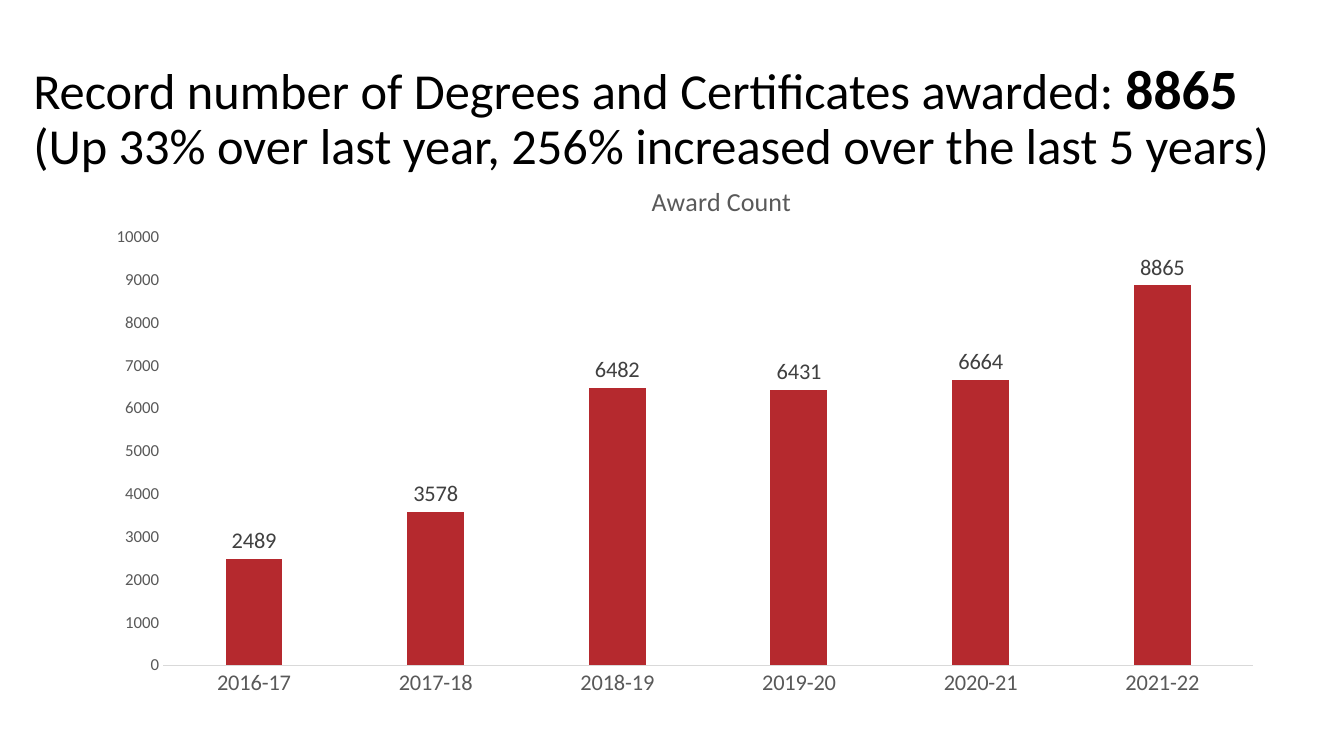
from dataclasses import dataclass

import lxml.etree
import pptx
import pptx.chart.data
import pptx.dml.color
import pptx.enum.chart
import pptx.enum.text
import pptx.oxml.ns
import pptx.util

Inches = pptx.util.Inches


@dataclass(frozen=True)
class Theme:
    font: str = "Calibri"
    black: str = "000000"
    grey: str = "595959"
    label_grey: str = "404040"
    rule: str = "D9D9D9"
    bar: str = "B5292E"
    title: float = 36
    highlight: float = 39.6
    chart_title: float = 18.6
    category: float = 16
    scale: float = 12


@dataclass(frozen=True)
class Award:
    year: str
    count: int


@dataclass(frozen=True)
class Phrase:
    text: str
    size: float
    bold: bool = False
    ends_line: bool = False


THEME = Theme()
AWARDS = [
    Award("2016-17", 2489),
    Award("2017-18", 3578),
    Award("2018-19", 6482),
    Award("2019-20", 6431),
    Award("2020-21", 6664),
    Award("2021-22", 8865),
]
HEADLINE = [
    Phrase("Record number of Degrees and Certificates awarded: ", THEME.title),
    Phrase("8865", THEME.highlight, bold=True, ends_line=True),
    Phrase("(Up 33% over last year, 256% increased over the last 5 years)", THEME.title),
]
PLOT_AREA = {"x": 0.056, "y": 0.135, "w": 0.867, "h": 0.774}


def rgb(color: str) -> pptx.dml.color.RGBColor:
    return pptx.dml.color.RGBColor.from_string(color)


def style_font(font, *, size: float, color: str, bold: bool = False) -> None:
    font.name = THEME.font
    font.size = pptx.util.Pt(size)
    font.bold = bold
    font.color.rgb = rgb(color)


def add_text(para, text: str, *, size: float, color: str, bold: bool = False) -> None:
    span = para.add_run()
    span.text = text
    style_font(span.font, size=size, color=color, bold=bold)


def fill_title(box) -> None:
    box.left, box.top = Inches(0.23), Inches(0.45)
    box.width, box.height = Inches(13.1), Inches(1.45)
    frame = box.text_frame
    frame.word_wrap = True
    frame.auto_size = pptx.enum.text.MSO_AUTO_SIZE.NONE
    frame.vertical_anchor = pptx.enum.text.MSO_ANCHOR.MIDDLE
    para = frame.paragraphs[0]
    para.alignment = pptx.enum.text.PP_ALIGN.LEFT
    para.line_spacing = 0.9
    for phrase in HEADLINE:
        add_text(para, phrase.text, size=phrase.size, color=THEME.black, bold=phrase.bold)
        if phrase.ends_line:
            para.add_line_break()


def place_plot_area(chart) -> None:
    qn = pptx.oxml.ns.qn
    plot_area = chart.plots[0]._element.getparent()
    for old in plot_area.findall(qn("c:layout")):
        plot_area.remove(old)
    layout = lxml.etree.Element(qn("c:layout"))
    manual = lxml.etree.SubElement(layout, qn("c:manualLayout"))
    settings = {"layoutTarget": "inner", "xMode": "edge", "yMode": "edge", **PLOT_AREA}
    for name, value in settings.items():
        lxml.etree.SubElement(manual, qn(f"c:{name}")).set("val", str(value))
    plot_area.insert(0, layout)


def style_axis(axis, *, size: float) -> None:
    axis.has_major_gridlines = False
    axis.major_tick_mark = pptx.enum.chart.XL_TICK_MARK.NONE
    axis.minor_tick_mark = pptx.enum.chart.XL_TICK_MARK.NONE
    style_font(axis.tick_labels.font, size=size, color=THEME.grey)


def add_award_chart(page) -> None:
    data = pptx.chart.data.CategoryChartData()
    data.categories = [award.year for award in AWARDS]
    data.add_series("Award Count", [award.count for award in AWARDS])
    chart = page.shapes.add_chart(
        pptx.enum.chart.XL_CHART_TYPE.COLUMN_CLUSTERED,
        Inches(0.92), Inches(1.61), Inches(12.47), Inches(5.49), data,
    ).chart
    style_font(chart.font, size=10, color=THEME.black)
    chart.has_legend = False
    chart.has_title = True
    para = chart.chart_title.text_frame.paragraphs[0]
    add_text(para, "Award Count", size=THEME.chart_title, color=THEME.grey)
    place_plot_area(chart)

    # Axes
    style_axis(chart.category_axis, size=THEME.category)
    line = chart.category_axis.format.line
    line.color.rgb = rgb(THEME.rule)
    line.width = pptx.util.Pt(0.75)
    scale = chart.value_axis
    style_axis(scale, size=THEME.scale)
    scale.format.line.fill.background()
    scale.minimum_scale, scale.maximum_scale, scale.major_unit = 0, 10000, 1000

    # Bars and their labels
    plot = chart.plots[0]
    plot.gap_width, plot.overlap = 219, -27
    plot.vary_by_categories = False
    bars = plot.series[0]
    bars.format.fill.solid()
    bars.format.fill.fore_color.rgb = rgb(THEME.bar)
    labels = bars.data_labels
    labels.show_value = True
    labels.position = pptx.enum.chart.XL_LABEL_POSITION.OUTSIDE_END
    style_font(labels.font, size=THEME.category, color=THEME.label_grey)


def main() -> None:
    deck = pptx.Presentation()
    deck.slide_width, deck.slide_height = Inches(13.33), Inches(7.5)
    page = deck.slides.add_slide(deck.slide_layouts[5])
    add_award_chart(page)
    fill_title(page.shapes.title)
    deck.save("out.pptx")


if __name__ == "__main__":
    main()
